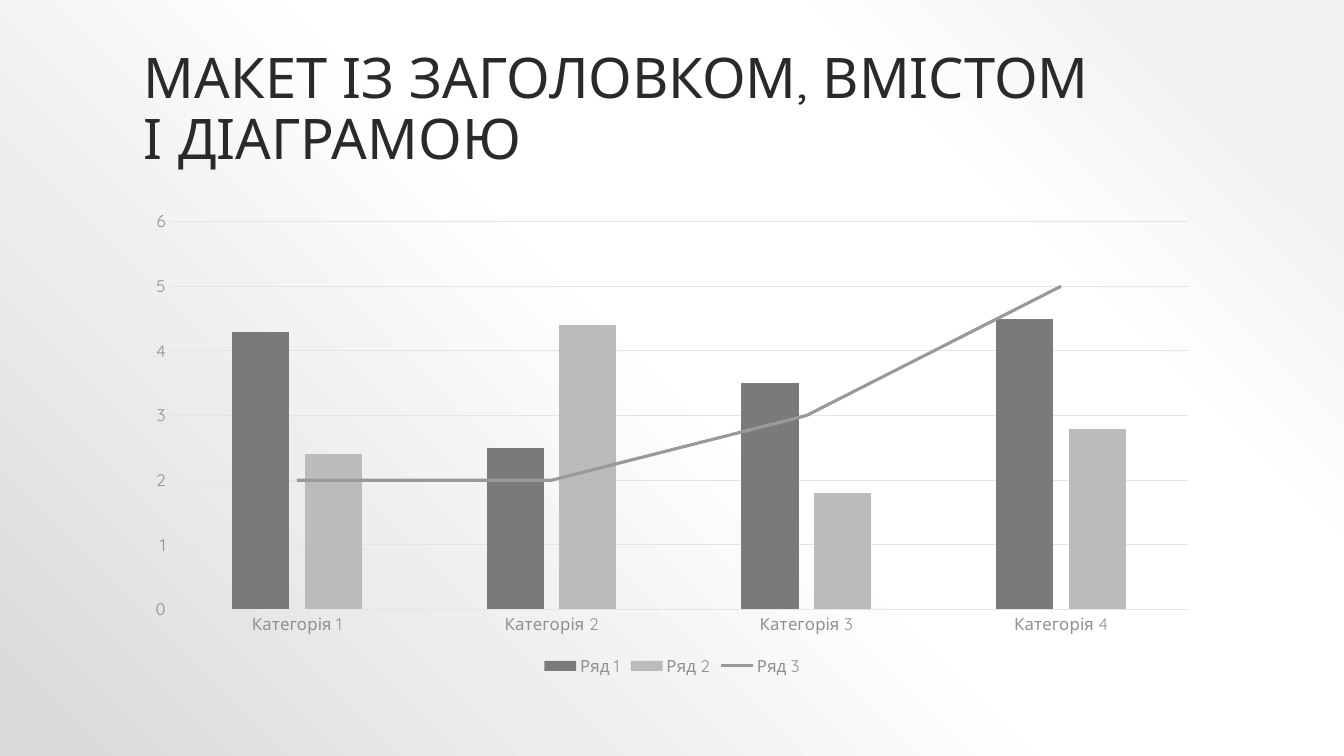
from copy import deepcopy
from dataclasses import dataclass

from pptx import Presentation
from pptx.chart.data import CategoryChartData
from pptx.dml.color import RGBColor
from pptx.enum.chart import XL_CHART_TYPE, XL_LEGEND_POSITION, XL_MARKER_STYLE, XL_TICK_MARK
from pptx.enum.text import MSO_ANCHOR
from pptx.oxml import parse_xml
from pptx.oxml.ns import nsdecls, qn
from pptx.util import Inches, Pt

COLUMNS = XL_CHART_TYPE.COLUMN_CLUSTERED
LEGEND_BOTTOM = XL_LEGEND_POSITION.BOTTOM
NO_MARKER = XL_MARKER_STYLE.NONE
NO_TICK = XL_TICK_MARK.NONE
ANCHOR_BOTTOM = MSO_ANCHOR.BOTTOM


@dataclass(frozen=True)
class Theme:
    font: str = "Quicksand"
    title: str = "2A2A2A"
    chart_text: str = "545454"
    label: str = "909090"
    grid: str = "E5E5E5"
    title_size: float = 40
    chart_size: float = 10
    label_size: float = 12
    grid_width: float = 0.75
    line_width: float = 2.25
    # Background stops: percent and colour, spreading from the top right corner
    background: tuple = ((10, "F2F2F2"), (28, "FFFFFF"), (48, "FFFFFF"), (100, "D9D9D9"))


@dataclass(frozen=True)
class DataSeries:
    name: str
    values: tuple
    color: str


THEME = Theme()
LEFT, WIDTH = Inches(1.33), Inches(10.67)
TITLE = "МАКЕТ ІЗ ЗАГОЛОВКОМ, ВМІСТОМ \nІ ДІАГРАМОЮ"
CATEGORIES = ("Категорія 1", "Категорія 2", "Категорія 3", "Категорія 4")
SERIES = (
    DataSeries("Ряд 1", (4.3, 2.5, 3.5, 4.5), "7A7A7A"),
    DataSeries("Ряд 2", (2.4, 4.4, 1.8, 2.8), "BBBBBB"),
    DataSeries("Ряд 3", (2, 2, 3, 5), "999999"),
)


def set_font(font, size: float, color: str) -> None:
    font.name = THEME.font
    font.size = Pt(size)
    font.bold = False
    font.color.rgb = RGBColor.from_string(color)


def set_line(line, color: str, width: float) -> None:
    line.color.rgb = RGBColor.from_string(color)
    line.width = Pt(width)


def add_text(slide, text: str, *, top, height, size: float, color: str,
             anchor, line_spacing: float) -> None:
    frame = slide.shapes.add_textbox(LEFT, top, WIDTH, height).text_frame
    frame.word_wrap = True
    frame.vertical_anchor = anchor
    paragraph = frame.paragraphs[0]
    paragraph.line_spacing = line_spacing
    for index, line in enumerate(text.split("\n")):
        if index:
            paragraph.add_line_break()
        run = paragraph.add_run()
        run.text = line
        set_font(run.font, size, color)


def paint_background(slide) -> None:
    slide.background.fill.gradient()
    gradient = next(slide.element.iter(qn("a:gradFill")))
    stops = "".join(
        f'<a:gs pos="{percent * 1000}"><a:srgbClr val="{color}"/></a:gs>'
        for percent, color in THEME.background
    )
    radial = parse_xml(
        f'<a:gradFill {nsdecls("a")} rotWithShape="1"><a:gsLst>{stops}</a:gsLst>'
        '<a:path path="circle"><a:fillToRect l="100000" b="100000"/></a:path></a:gradFill>'
    )
    gradient.getparent().replace(gradient, radial)


def move_last_series_to_line(chart) -> None:
    """Turn the last column series into a line on the same axes."""
    columns = chart.plots[0]
    bar_chart = next(chart.element.iter(qn("c:barChart")))
    line_chart = parse_xml(
        f'<c:lineChart {nsdecls("c")}><c:grouping val="standard"/>'
        '<c:varyColors val="0"/><c:marker val="1"/></c:lineChart>'
    )
    series = bar_chart.findall(qn("c:ser"))[len(columns.series) - 1]
    for invert in series.findall(qn("c:invertIfNegative")):
        series.remove(invert)
    line_chart.insert(2, series)
    for axis_id in bar_chart.findall(qn("c:axId")):
        line_chart.append(deepcopy(axis_id))
    bar_chart.addnext(line_chart)


def style_axes(chart) -> None:
    for axis in (chart.category_axis, chart.value_axis):
        axis.major_tick_mark = axis.minor_tick_mark = NO_TICK
        set_font(axis.tick_labels.font, THEME.label_size, THEME.label)
    set_line(chart.category_axis.format.line, THEME.grid, THEME.grid_width)
    value_axis = chart.value_axis
    value_axis.minimum_scale, value_axis.maximum_scale, value_axis.major_unit = 0, 6, 1
    value_axis.format.line.fill.background()
    value_axis.has_major_gridlines = True
    set_line(value_axis.major_gridlines.format.line, THEME.grid, THEME.grid_width)


def add_combined_chart(slide) -> None:
    data = CategoryChartData()
    data.categories = CATEGORIES
    for item in SERIES:
        data.add_series(item.name, item.values)
    chart = slide.shapes.add_chart(COLUMNS, LEFT, Inches(2), WIDTH, Inches(4.75), data).chart
    chart.has_title = False
    set_font(chart.font, THEME.chart_size, THEME.chart_text)
    move_last_series_to_line(chart)
    style_axes(chart)

    # Columns and line
    columns, line_plot = chart.plots
    columns.gap_width = 219
    columns.overlap = -27
    columns.vary_by_categories = False
    for series, item in zip(columns.series, SERIES):
        series.format.fill.solid()
        series.format.fill.fore_color.rgb = RGBColor.from_string(item.color)
    trend = line_plot.series[0]
    trend.smooth = False
    trend.marker.style = NO_MARKER
    set_line(trend.format.line, SERIES[-1].color, THEME.line_width)

    # Legend
    chart.has_legend = True
    chart.legend.position = LEGEND_BOTTOM
    chart.legend.include_in_layout = False
    set_font(chart.legend.font, THEME.label_size, THEME.label)


def main() -> None:
    presentation = Presentation()
    presentation.slide_width = Inches(13.33)
    presentation.slide_height = Inches(7.5)
    slide = presentation.slides.add_slide(presentation.slide_layouts[6])
    paint_background(slide)
    add_text(slide, TITLE, top=Inches(0.3), height=Inches(1.45), size=THEME.title_size,
             color=THEME.title, anchor=ANCHOR_BOTTOM, line_spacing=0.9)
    add_combined_chart(slide)
    presentation.save("out.pptx")


if __name__ == "__main__":
    main()
